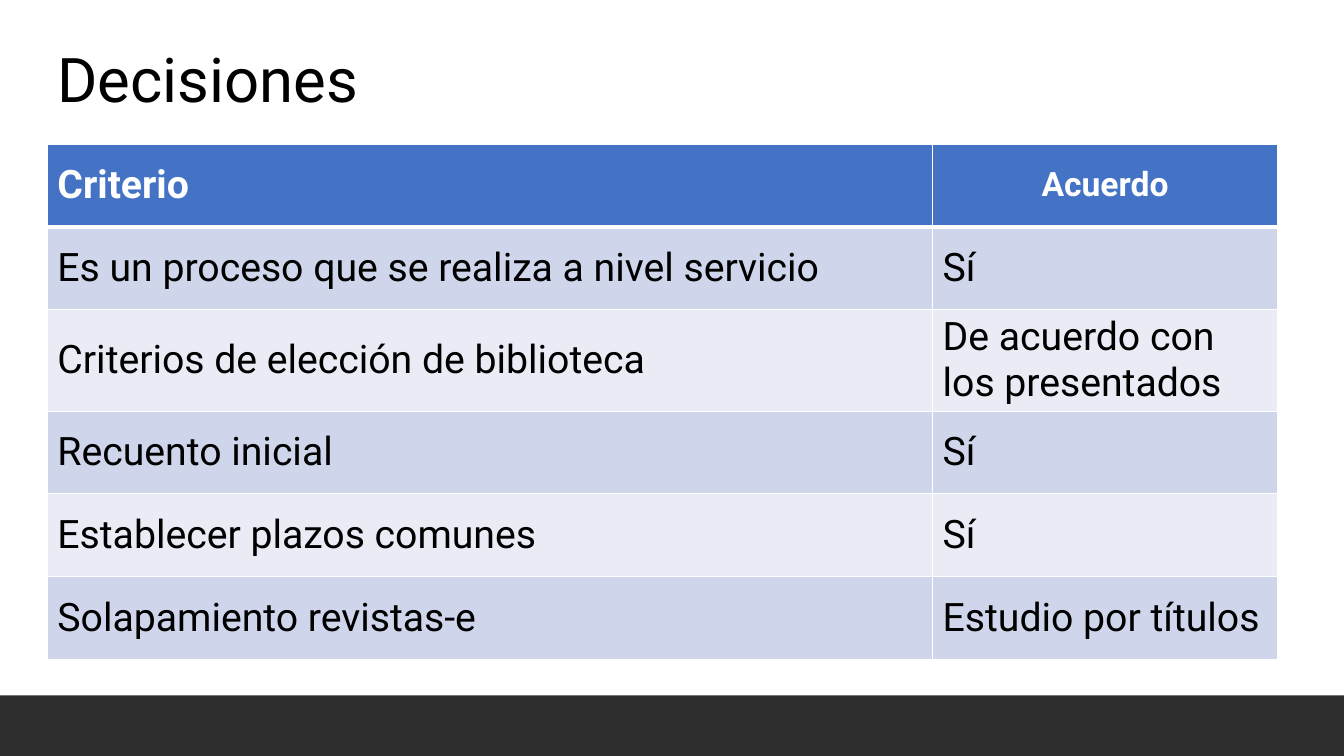
from lxml import etree
from pptx import Presentation
from pptx import util as u
from pptx.dml.color import RGBColor
from pptx.enum import shapes, text
from pptx.oxml import ns

BLACK = RGBColor(0x00, 0x00, 0x00)
WHITE = RGBColor(0xFF, 0xFF, 0xFF)
FOOTER_GREY = RGBColor(0x2D, 0x2D, 0x2D)
HEADER_BLUE = RGBColor(0x44, 0x72, 0xC4)
BAND_COLORS = (RGBColor(0xCF, 0xD5, 0xEA), RGBColor(0xE9, 0xEB, 0xF5))

DECISIONS = [
    ("Criterio", "Acuerdo"),
    ("Es un proceso que se realiza a nivel servicio", "Sí"),
    ("Criterios de elección de biblioteca", "De acuerdo con los presentados"),
    ("Recuento inicial", "Sí"),
    ("Establecer plazos comunes", "Sí"),
    ("Solapamiento revistas-e", "Estudio por títulos"),
]


def write(frame, words, size=28, color=BLACK, bold=False,
          align=text.PP_ALIGN.LEFT, spacing=None, font="Roboto"):
    paragraph = frame.paragraphs[0]
    paragraph.alignment = align
    paragraph.line_spacing = spacing
    run = paragraph.add_run()
    run.text = words
    run.font.name = font
    run.font.size = u.Pt(size)
    run.font.bold = bold
    run.font.color.rgb = color


def set_borders(cell, **widths):
    """Draw white cell borders; widths in points by side tag (lnL, lnR, lnT, lnB)."""
    properties = cell._tc.get_or_add_tcPr()
    for side, width in widths.items():
        line = etree.SubElement(properties, ns.qn(f"a:{side}"), w=str(u.Pt(width)))
        fill = etree.SubElement(line, ns.qn("a:solidFill"))
        etree.SubElement(fill, ns.qn("a:srgbClr"), val=str(WHITE))


class SlideBuilder:
    def __init__(self, presentation):
        self.width = presentation.slide_width
        self.slide = presentation.slides.add_slide(presentation.slide_layouts[5])

    def footer_bar(self, top, height):
        bar = self.slide.shapes.add_shape(
            shapes.MSO_SHAPE.RECTANGLE, 0, u.Inches(top), self.width, u.Inches(height))
        bar.shadow.inherit = False
        bar.fill.solid()
        bar.fill.fore_color.rgb = FOOTER_GREY
        bar.line.fill.background()

    def title(self, words, left, top, width, height):
        title = self.slide.shapes.title
        title.left, title.top = u.Inches(left), u.Inches(top)
        title.width, title.height = u.Inches(width), u.Inches(height)
        frame = title.text_frame
        frame.auto_size = text.MSO_AUTO_SIZE.NONE
        frame.vertical_anchor = text.MSO_ANCHOR.MIDDLE
        write(frame, words, size=44, spacing=0.9)

    def table(self, rows, left, top, column_widths, row_height):
        table = self.slide.shapes.add_table(
            len(rows), len(column_widths), u.Inches(left), u.Inches(top),
            u.Inches(sum(column_widths)), u.Inches(row_height * len(rows))).table
        for column, width in zip(table.columns, column_widths):
            column.width = u.Inches(width)
        for r, row in enumerate(rows):
            table.rows[r].height = u.Inches(row_height)
            for c, words in enumerate(row):
                self.cell(table.cell(r, c), words, r, c)

    def cell(self, cell, words, row, column):
        header = row == 0
        set_borders(cell, lnL=1, lnR=1, lnT=3 if row == 1 else 1, lnB=3 if header else 1)
        cell.fill.solid()
        cell.fill.fore_color.rgb = HEADER_BLUE if header else BAND_COLORS[(row - 1) % 2]
        cell.vertical_anchor = text.MSO_ANCHOR.MIDDLE
        centered = header and column == 1
        write(cell.text_frame, words, size=24 if centered else 28,
              color=WHITE if header else BLACK, bold=header,
              align=text.PP_ALIGN.CENTER if centered else text.PP_ALIGN.LEFT)


def main():
    presentation = Presentation()
    presentation.slide_width = u.Inches(13.33)
    presentation.slide_height = u.Inches(7.5)
    builder = SlideBuilder(presentation)
    builder.footer_bar(top=6.9, height=0.6)
    builder.title("Decisiones", left=0.47, top=0.4, width=12.4, height=0.83)
    builder.table(DECISIONS, left=0.47, top=1.43,
                  column_widths=(8.78, 3.42), row_height=0.82)
    presentation.save("out.pptx")


if __name__ == "__main__":
    main()
